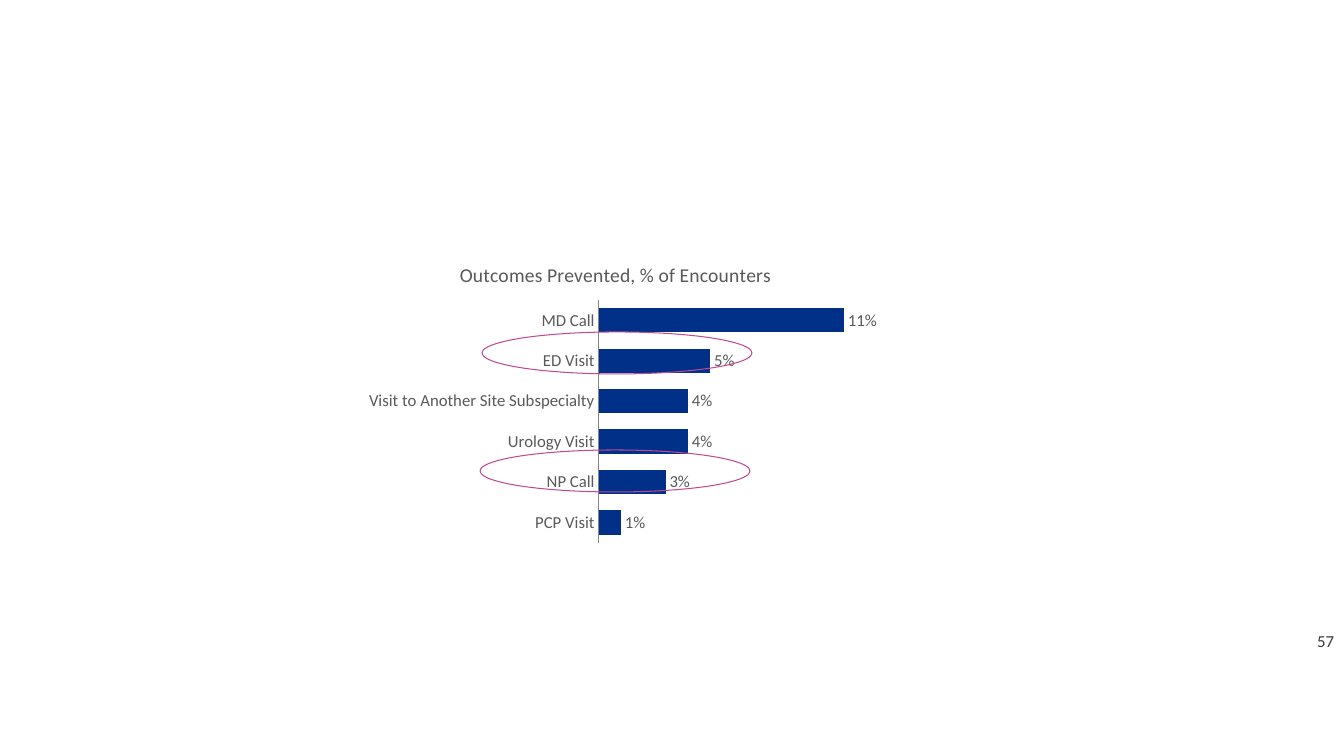
"""Build the slide with the chart of outcomes prevented per encounter."""
from lxml import etree
from pptx import Presentation
from pptx.chart.data import CategoryChartData
from pptx.dml.color import RGBColor
from pptx.enum.chart import XL_CHART_TYPE as ChartType
from pptx.enum.chart import XL_LABEL_POSITION as LabelPosition
from pptx.enum.chart import XL_TICK_LABEL_POSITION as TickLabels
from pptx.enum.chart import XL_TICK_MARK as TickMark
from pptx.enum.shapes import MSO_SHAPE as Shape
from pptx.enum.text import MSO_ANCHOR as Anchor
from pptx.enum.text import PP_ALIGN as Align
from pptx.oxml.ns import qn
from pptx.util import Emu, Pt

TITLE = "Outcomes Prevented, % of Encounters"
OUTCOMES = [
    ("PCP Visit", 0.01),
    ("NP Call", 0.03),
    ("Urology Visit", 0.04),
    ("Visit to Another Site Subspecialty", 0.04),
    ("ED Visit", 0.05),
    ("MD Call", 0.11),
]
PAGE_NUMBER = "57"

COLOURS = {"text": "3A3A3A", "label": "595959", "bar": "003087",
           "axis": "868686", "ring": "C14991"}
FONT = "Calibri"
PX = 9071
SLIDE_SIZE = (1344, 756)
CHART_BOX = (355, 246, 522, 303)
PLOT_BOX = (599, 300, 268, 243)
RING_BOXES = [(482, 332, 270, 42), (480, 450, 270, 42)]
NUMBER_BOX = (1243, 621, 101, 40)


def px(*lengths):
    return [Emu(length * PX) for length in lengths]


def colour(name):
    return RGBColor.from_string(COLOURS[name])


def set_all(target, **values):
    for name, value in values.items():
        setattr(target, name, value)


def style_font(font, size, name):
    set_all(font, name=FONT, size=Pt(size), bold=False)
    font.color.rgb = colour(name)


def place_plot(chart):
    plot_area = chart._chartSpace.chart.plotArea
    for old in plot_area.findall(qn("c:layout")):
        plot_area.remove(old)
    layout = etree.Element(qn("c:layout"))
    manual = etree.SubElement(layout, qn("c:manualLayout"))
    left, top, width, height = CHART_BOX
    x, y, w, h = PLOT_BOX
    settings = {"layoutTarget": "inner", "xMode": "edge", "yMode": "edge",
                "x": (x - left) / width, "y": (y - top) / height,
                "w": w / width, "h": h / height}
    for tag, value in settings.items():
        etree.SubElement(manual, qn(f"c:{tag}")).set("val", str(value))
    plot_area.insert(0, layout)


def add_outcomes(page):
    data = CategoryChartData(number_format="0%")
    data.categories = [name for name, share in OUTCOMES]
    data.add_series(TITLE, [share for name, share in OUTCOMES])
    chart = page.shapes.add_chart(
        ChartType.BAR_CLUSTERED, *px(*CHART_BOX), data).chart
    set_all(chart, has_legend=False, has_title=True)
    style_font(chart.font, 12, "label")
    para = chart.chart_title.text_frame.paragraphs[0]
    span = para.add_run()
    span.text = TITLE
    style_font(span.font, 14, "label")
    chart.chart_title.include_in_layout = False

    categories, values = chart.category_axis, chart.value_axis
    set_all(categories, major_tick_mark=TickMark.NONE,
            minor_tick_mark=TickMark.NONE, has_major_gridlines=False)
    style_font(categories.tick_labels.font, 12, "label")
    categories.format.line.color.rgb = colour("axis")
    categories.format.line.width = Pt(0.75)
    set_all(values, visible=False, has_major_gridlines=False,
            minimum_scale=0, maximum_scale=0.12,
            tick_label_position=TickLabels.NONE)

    plot = chart.plots[0]
    set_all(plot, gap_width=66, vary_by_categories=False, has_data_labels=True)
    set_all(plot.data_labels, show_value=True, number_format="0%",
            number_format_is_linked=False, position=LabelPosition.OUTSIDE_END)
    style_font(plot.data_labels.font, 12, "label")
    fill = plot.series[0].format.fill
    fill.solid()
    fill.fore_color.rgb = colour("bar")
    place_plot(chart)


def add_ring(page, box):
    ring = page.shapes.add_shape(Shape.OVAL, *px(*box))
    ring.shadow.inherit = False
    ring.fill.background()
    ring.line.color.rgb = colour("ring")
    ring.line.width = Pt(0.75)


def add_page_number(page):
    frame = page.shapes.add_textbox(*px(*NUMBER_BOX)).text_frame
    set_all(frame, word_wrap=True, vertical_anchor=Anchor.MIDDLE)
    para = frame.paragraphs[0]
    para.alignment = Align.RIGHT
    span = para.add_run()
    span.text = PAGE_NUMBER
    style_font(span.font, 12, "text")


def main():
    deck = Presentation()
    deck.slide_width, deck.slide_height = px(*SLIDE_SIZE)
    page = deck.slides.add_slide(deck.slide_layouts[6])
    add_page_number(page)
    add_outcomes(page)
    for box in RING_BOXES:
        add_ring(page, box)
    deck.save("out.pptx")


if __name__ == "__main__":
    main()
